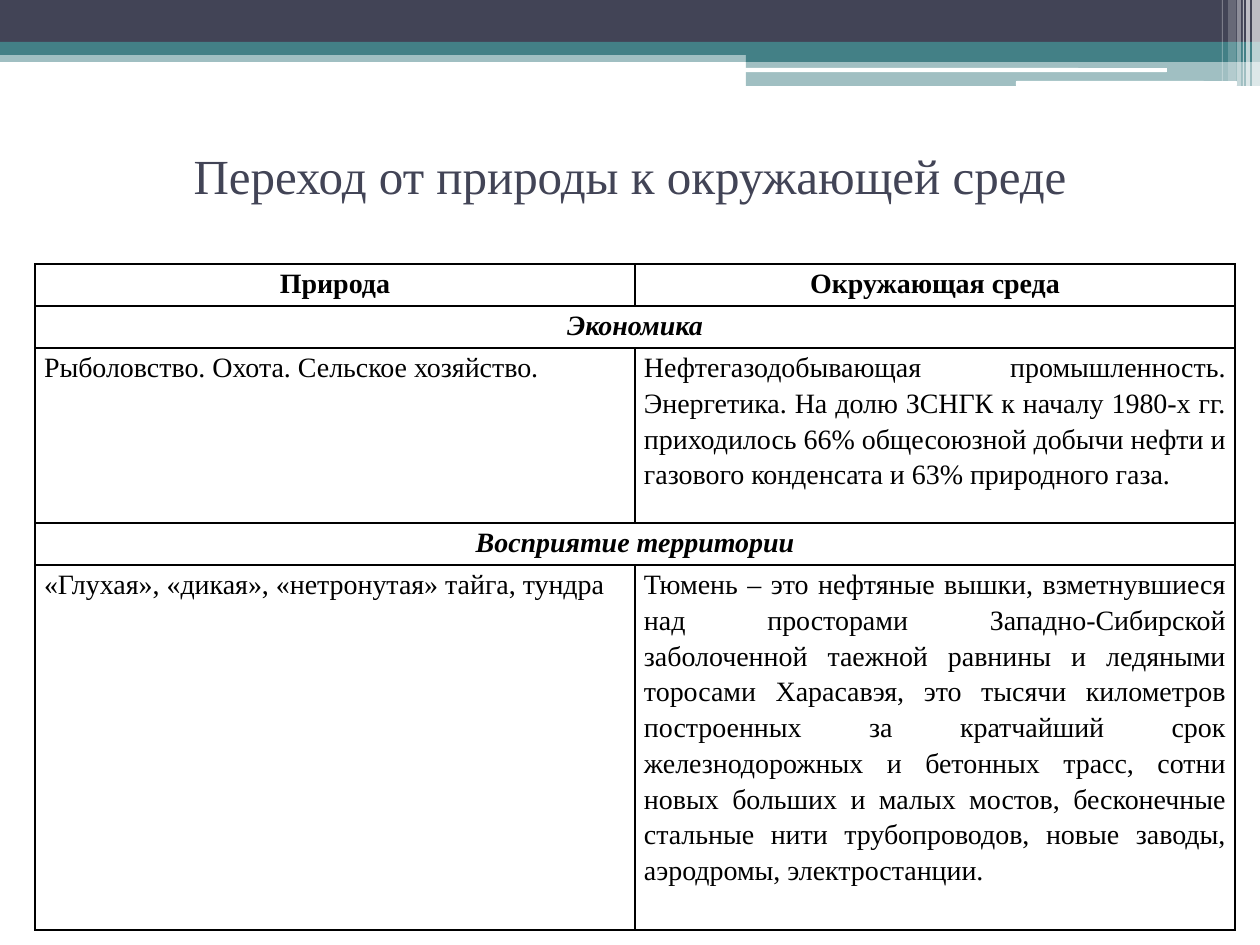
import pptx
import pptx.util
import pptx.dml.color
import pptx.enum.shapes
import pptx.enum.text
import pptx.oxml
import pptx.oxml.ns
import lxml.etree

RGBColor = pptx.dml.color.RGBColor
SHAPE = pptx.enum.shapes.MSO_SHAPE
ALIGN = pptx.enum.text.PP_ALIGN
ANCHOR = pptx.enum.text.MSO_ANCHOR

SLATE = RGBColor(0x42, 0x44, 0x56)
TEAL = RGBColor(0x43, 0x80, 0x86)
WHITE = RGBColor(0xFF, 0xFF, 0xFF)
BLACK = RGBColor(0, 0, 0)
FONT = "Times New Roman"
EMU_PER_PX = 914400 / 126

TITLE = "Переход от природы к окружающей среде"
HEADINGS = ("Природа", "Окружающая среда")
SECTIONS = [
    ("Экономика",
     "Рыболовство. Охота. Сельское хозяйство.",
     "Нефтегазодобывающая промышленность. Энергетика. На долю ЗСНГК к началу "
     "1980-х гг. приходилось 66% общесоюзной добычи нефти и газового конденсата "
     "и 63% природного газа."),
    ("Восприятие территории",
     "«Глухая», «дикая», «нетронутая» тайга, тундра",
     "Тюмень – это нефтяные вышки, взметнувшиеся над просторами "
     "Западно-Сибирской заболоченной таежной равнины и ледяными торосами "
     "Харасавэя, это тысячи километров построенных за кратчайший срок "
     "железнодорожных и бетонных трасс, сотни новых больших и малых мостов, "
     "бесконечные стальные нити трубопроводов, новые заводы, аэродромы, "
     "электростанции."),
]
HEADING_HEIGHT = 42
BODY_HEIGHTS = (175, 365)


def px(length):
    return pptx.util.Emu(round(length * EMU_PER_PX))


def add_band(page, box, color, opacity=100, kind=SHAPE.RECTANGLE):
    band = page.shapes.add_shape(kind, *map(px, box))
    band.shadow.inherit = False
    band.line.fill.background()
    band.fill.solid()
    band.fill.fore_color.rgb = color
    if opacity < 100:
        tint = band.fill._xPr.find(".//" + pptx.oxml.ns.qn("a:srgbClr"))
        lxml.etree.SubElement(tint, pptx.oxml.ns.qn("a:alpha"), val=str(opacity * 1000))


def add_header(page, box):
    left, top, width, height = box
    right = left + width
    step = left + 746
    add_band(page, (left, top + 50, width, 12), TEAL, 50)
    add_band(page, (left, top, width, 42), SLATE)
    add_band(page, (left, top + 42, width, 13), TEAL)
    add_band(page, (step, top + 49, right - step, 13), TEAL)
    add_band(page, (step, top + 61, right - step, height - 61), TEAL, 50)
    for x, y, length, thickness in ((745, 68, 422, 4), (1016, 81, 221, 5)):
        add_band(page, (left + x, top + y, length, thickness), WHITE,
                 kind=SHAPE.ROUNDED_RECTANGLE)
    for inset, thickness, length, opacity in (
            (8, 8, height, 65), (14, 4, height, 65), (17, 1, height, 60),
            (23, 4, height, 40), (32, 8, 81, 20), (38, 1, 81, 30)):
        add_band(page, (right - inset, top, thickness, length), WHITE, opacity)


def write(para, text, size, color, align, bold=False, italic=False):
    para.text = text
    para.alignment = align
    para.font.name = FONT
    para.font.size = pptx.util.Pt(size)
    para.font.color.rgb = color
    para.font.bold = bold
    para.font.italic = italic


def add_title(page, box):
    frame = page.shapes.add_textbox(*map(px, box)).text_frame
    frame.word_wrap = True
    frame.vertical_anchor = ANCHOR.MIDDLE
    write(frame.paragraphs[0], TITLE, 28, SLATE, ALIGN.CENTER)


def style_cell(cell):
    cell.margin_left = cell.margin_right = px(9)
    cell.margin_top = cell.margin_bottom = 0
    properties = cell._tc.get_or_add_tcPr()
    for side in ("lnL", "lnR", "lnT", "lnB"):
        properties.append(pptx.oxml.parse_xml(
            f'<a:{side} {pptx.oxml.ns.nsdecls("a")} w="12700"><a:solidFill>'
            f'<a:srgbClr val="{BLACK}"/></a:solidFill></a:{side}>'))
    cell.fill.background()


def fill_row(table, index, texts, align, bold=False, italic=False):
    if len(texts) == 1:
        table.cell(index, 0).merge(table.cell(index, 1))
    for column, text in enumerate(texts):
        para = table.cell(index, column).text_frame.paragraphs[0]
        write(para, text, 16, BLACK, align, bold, italic)
        para.line_spacing = 1.15


def add_comparison(page, box):
    heights = [HEADING_HEIGHT]
    for body_height in BODY_HEIGHTS:
        heights += [HEADING_HEIGHT, body_height]
    table = page.shapes.add_table(len(heights), 2, *map(px, box)).table
    table.first_row = table.horz_banding = False
    for column in table.columns:
        column.width = px(box[2] / 2)
    for row, height in zip(table.rows, heights):
        row.height = px(height)
    for cell in table.iter_cells():
        style_cell(cell)
    fill_row(table, 0, HEADINGS, ALIGN.CENTER, bold=True)
    for number, (heading, nature, environment) in enumerate(SECTIONS):
        index = 1 + 2 * number
        fill_row(table, index, (heading,), ALIGN.CENTER, bold=True, italic=True)
        fill_row(table, index + 1, (nature, environment), ALIGN.JUSTIFY)


def main():
    deck = pptx.Presentation()
    deck.slide_width, deck.slide_height = px(1260), px(945)
    page = deck.slides.add_slide(deck.slide_layouts[6])
    add_header(page, (0, 0, 1260, 86))
    add_title(page, (63, 125, 1134, 100))
    add_comparison(page, (35, 264, 1200, 666))
    deck.save("out.pptx")


if __name__ == "__main__":
    main()
